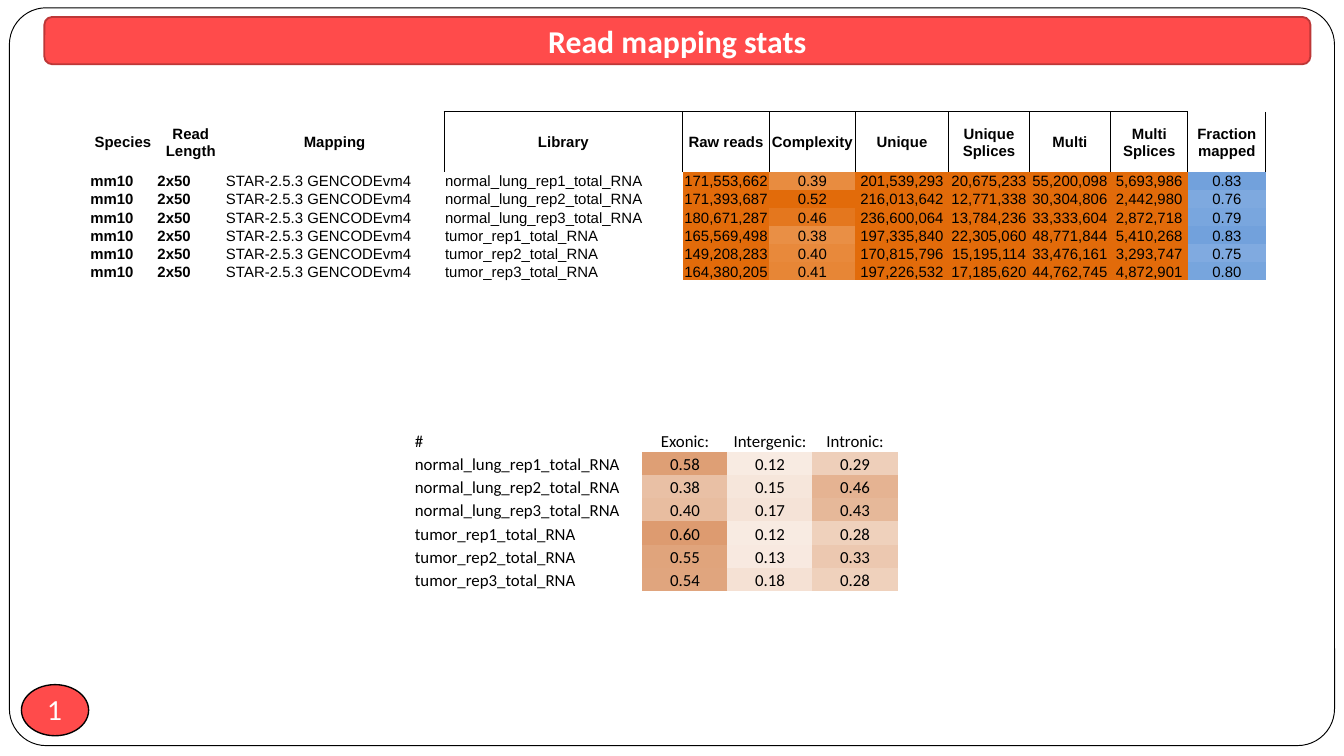
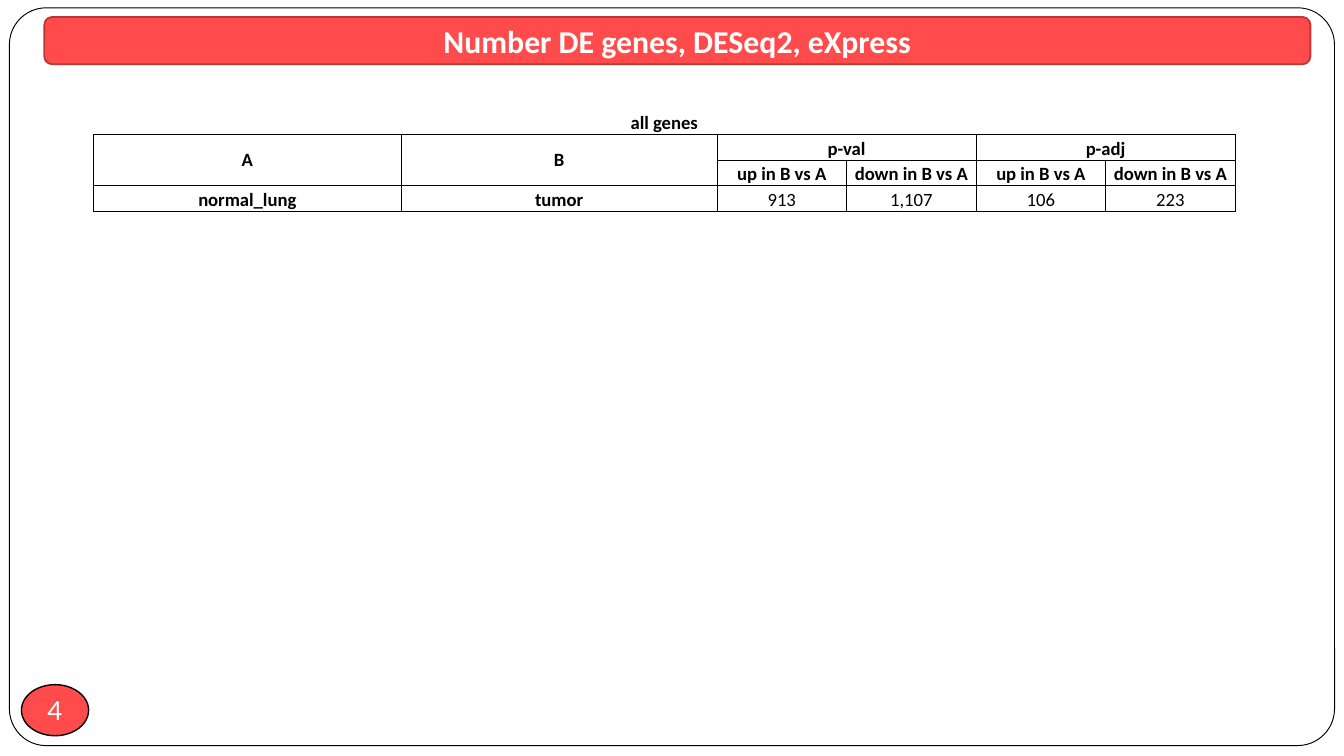
from lxml.etree import SubElement
from pptx import Presentation
from pptx.dml.color import RGBColor
from pptx.enum.shapes import MSO_SHAPE as SHAPE
from pptx.enum.text import MSO_ANCHOR as ANCHOR, PP_ALIGN as ALIGN
from pptx.oxml import parse_xml
from pptx.oxml.ns import nsdecls, qn
from pptx.util import Inches, Pt

WIDTH = Inches(10)
HEIGHT = WIDTH * 9 // 16
RED, DARK_RED = "FF4B4B", "BD3737"
BLACK, WHITE = "000000", "FFFFFF"
ORANGE, BLUE, BROWN = "E26B0A", "558ED5", "C65911"
PLAIN_TABLE = "{2D5ABB26-0587-4C30-8999-92F81FD0307C}"

LIBRARIES = [f"{tissue}_rep{n}_total_RNA"
             for tissue in ("normal_lung", "tumor") for n in (1, 2, 3)]

MAPPING_HEADERS = ["Species", "Read Length", "Mapping", "Library", "Raw reads",
                   "Complexity", "Unique", "Unique Splices", "Multi",
                   "Multi Splices", "Fraction mapped"]
MAPPING_STATS = [
    ["171,553,662", "0.39", "201,539,293", "20,675,233", "55,200,098", "5,693,986", "0.83"],
    ["171,393,687", "0.52", "216,013,642", "12,771,338", "30,304,806", "2,442,980", "0.76"],
    ["180,671,287", "0.46", "236,600,064", "13,784,236", "33,333,604", "2,872,718", "0.79"],
    ["165,569,498", "0.38", "197,335,840", "22,305,060", "48,771,844", "5,410,268", "0.83"],
    ["149,208,283", "0.40", "170,815,796", "15,195,114", "33,476,161", "3,293,747", "0.75"],
    ["164,380,205", "0.41", "197,226,532", "17,185,620", "44,762,745", "4,872,901", "0.80"],
]
REGION_HEADERS = ["#", "Exonic:", "Intergenic:", "Intronic:"]
REGION_SHARES = [
    ["0.58", "0.12", "0.29"],
    ["0.38", "0.15", "0.46"],
    ["0.40", "0.17", "0.43"],
    ["0.60", "0.12", "0.28"],
    ["0.55", "0.13", "0.33"],
    ["0.54", "0.18", "0.28"],
]
DE_ROWS = [
    ["all genes", "", "", "", "", ""],
    ["A", "B", "p-val", "", "p-adj", ""],
    ["", ""] + ["up in B vs A", "down in B vs A"] * 2,
    ["normal_lung", "tumor", "913", "1,107", "106", "223"],
]
# First row, first column, last row, last column
DE_MERGES = [(0, 0, 0, 5), (1, 0, 2, 0), (1, 1, 2, 1), (1, 2, 1, 3), (1, 4, 1, 5)]


def rgb(color):
    return RGBColor.from_string(color)


def across(percent):
    return round(WIDTH * percent / 100)


def down(percent):
    return round(HEIGHT * percent / 100)


def shade(text, color, full=1):
    """Blend from white at 0 to color at full and above."""
    share = min(float(text.replace(",", "")) / full, 1)
    channels = (int(color[i:i + 2], 16) for i in (0, 2, 4))
    return "".join(f"{round(255 - (255 - c) * share):02X}" for c in channels)


def write(tf, text, size, font, color=BLACK, bold=False, align=ALIGN.CENTER):
    p = tf.paragraphs[0]
    p.alignment = align
    r = p.add_run()
    r.text = text
    r.font.size, r.font.name, r.font.bold = Pt(size), font, bold
    r.font.color.rgb = rgb(color)


def add_shape(slide, kind, box, fill, line, line_width):
    """Place a preset shape; box is left, top, width, height in percent."""
    left, top, width, height = box
    sp = slide.shapes.add_shape(kind, across(left), down(top), across(width), down(height))
    sp.shadow.inherit = False
    sp.fill.solid()
    sp.fill.fore_color.rgb = rgb(fill)
    sp.line.color.rgb = rgb(line)
    sp.line.width = Pt(line_width)
    sp.text_frame.vertical_anchor = ANCHOR.MIDDLE
    return sp


def add_framed_slide(prs, title, number):
    slide = prs.slides.add_slide(prs.slide_layouts[6])
    frame = add_shape(slide, SHAPE.ROUNDED_RECTANGLE, (0.7, 1.03, 98.6, 97.6), WHITE, BLACK, 0.5)
    frame.adjustments[0] = 0.05
    badge = add_shape(slide, SHAPE.OVAL, (1.6, 90.57, 5, 6.76), RED, BLACK, 0.75)
    tf = badge.text_frame
    tf.margin_left = tf.margin_right = tf.margin_top = tf.margin_bottom = 0
    tf.word_wrap = False
    write(tf, str(number), 14, "Lato", WHITE)
    band = add_shape(slide, SHAPE.ROUNDED_RECTANGLE, (3.3, 2.25, 94.2, 6.25), RED, DARK_RED, 1)
    write(band.text_frame, title, 17, "Calibri", WHITE, bold=True)
    return slide


def add_plain_table(slide, left, top, col_widths, row_heights):
    """Add an unstyled table; all lengths are percent of the slide."""
    frame = slide.shapes.add_table(len(row_heights), len(col_widths), across(left), down(top),
                                   across(sum(col_widths)), down(sum(row_heights)))
    table = frame.table
    table.first_row = table.horz_banding = False
    table._tbl.tblPr.find(qn("a:tableStyleId")).text = PLAIN_TABLE
    for column, width in zip(table.columns, col_widths):
        column.width = across(width)
    for row, height in zip(table.rows, row_heights):
        row.height = down(height)
    return table


def draw_borders(cell, sides):
    """Draw thin black lines on the sides named by letters of LRTB."""
    tcPr = cell._tc.get_or_add_tcPr()
    for i, side in enumerate(s for s in "LRTB" if s in sides):
        ln = parse_xml(f'<a:ln{side} {nsdecls("a")} w="{Pt(0.5)}"/>')
        SubElement(SubElement(ln, qn("a:solidFill")), qn("a:srgbClr"), val=BLACK)
        tcPr.insert(i, ln)


def fill_cell(cell, text, size, font, bold=False, align=ALIGN.CENTER,
              anchor=ANCHOR.BOTTOM, fill=None, sides=""):
    cell.margin_left = cell.margin_right = cell.margin_top = Pt(0.5)
    cell.margin_bottom = 0
    cell.vertical_anchor = anchor
    if fill:
        cell.fill.solid()
        cell.fill.fore_color.rgb = rgb(fill)
    else:
        cell.fill.background()
    draw_borders(cell, sides)
    if text:
        write(cell.text_frame, text, size, font, bold=bold, align=align)


def add_mapping_table(slide):
    widths = [5, 5.1, 16.3, 17.75, 6.45, 6.4, 6.95, 6, 6.05, 5.75, 5.8]
    table = add_plain_table(slide, 6.65, 14.8, widths, [7.94] + [2.4] * len(LIBRARIES))
    last = len(widths) - 1
    for c, header in enumerate(MAPPING_HEADERS):
        sides = "" if c < 2 else "R" if c == 2 else "LR" if c == last else "LRT"
        fill_cell(table.cell(0, c), header, 8, "Arial", bold=True,
                  anchor=ANCHOR.MIDDLE, sides=sides)
    for r, (library, stats) in enumerate(zip(LIBRARIES, MAPPING_STATS), 1):
        labels = ["mm10", "2x50", "STAR-2.5.3 GENCODEvm4", library]
        for c, label in enumerate(labels):
            fill_cell(table.cell(r, c), label, 8, "Arial", bold=c < 2, align=ALIGN.LEFT)
        for c, value in enumerate(stats, len(labels)):
            fill = shade(value, BLUE) if c == last else shade(value, ORANGE, 0.5)
            fill_cell(table.cell(r, c), value, 8, "Arial", fill=fill)


def add_region_table(slide):
    rows = [REGION_HEADERS] + [[name] + shares for name, shares in zip(LIBRARIES, REGION_SHARES)]
    table = add_plain_table(slide, 30.8, 56.7, [17] + [6.33] * 3, [3.07] * len(rows))
    for r, row in enumerate(rows):
        for c, text in enumerate(row):
            fill_cell(table.cell(r, c), text, 9, "Calibri",
                      align=ALIGN.CENTER if c else ALIGN.LEFT,
                      fill=shade(text, BROWN) if r and c else None)


def add_de_table(slide):
    table = add_plain_table(slide, 6.95, 14.4, [22.9, 23.5] + [9.64] * 4, [3.4] * len(DE_ROWS))
    for top, left, bottom, right in DE_MERGES:
        table.cell(top, left).merge(table.cell(bottom, right))
    for r, row in enumerate(DE_ROWS):
        for c, text in enumerate(row):
            fill_cell(table.cell(r, c), text, 10, "Calibri", bold=r < 3 or c < 2,
                      anchor=ANCHOR.MIDDLE if text in ("A", "B") else ANCHOR.BOTTOM,
                      sides="LRTB" if r else "B")


def main():
    prs = Presentation()
    prs.slide_width, prs.slide_height = WIDTH, HEIGHT
    mapping_slide = add_framed_slide(prs, "Read mapping stats", 1)
    add_mapping_table(mapping_slide)
    add_region_table(mapping_slide)
    add_de_table(add_framed_slide(prs, "Number DE genes, DESeq2, eXpress", 4))
    prs.save("out.pptx")


if __name__ == "__main__":
    main()
